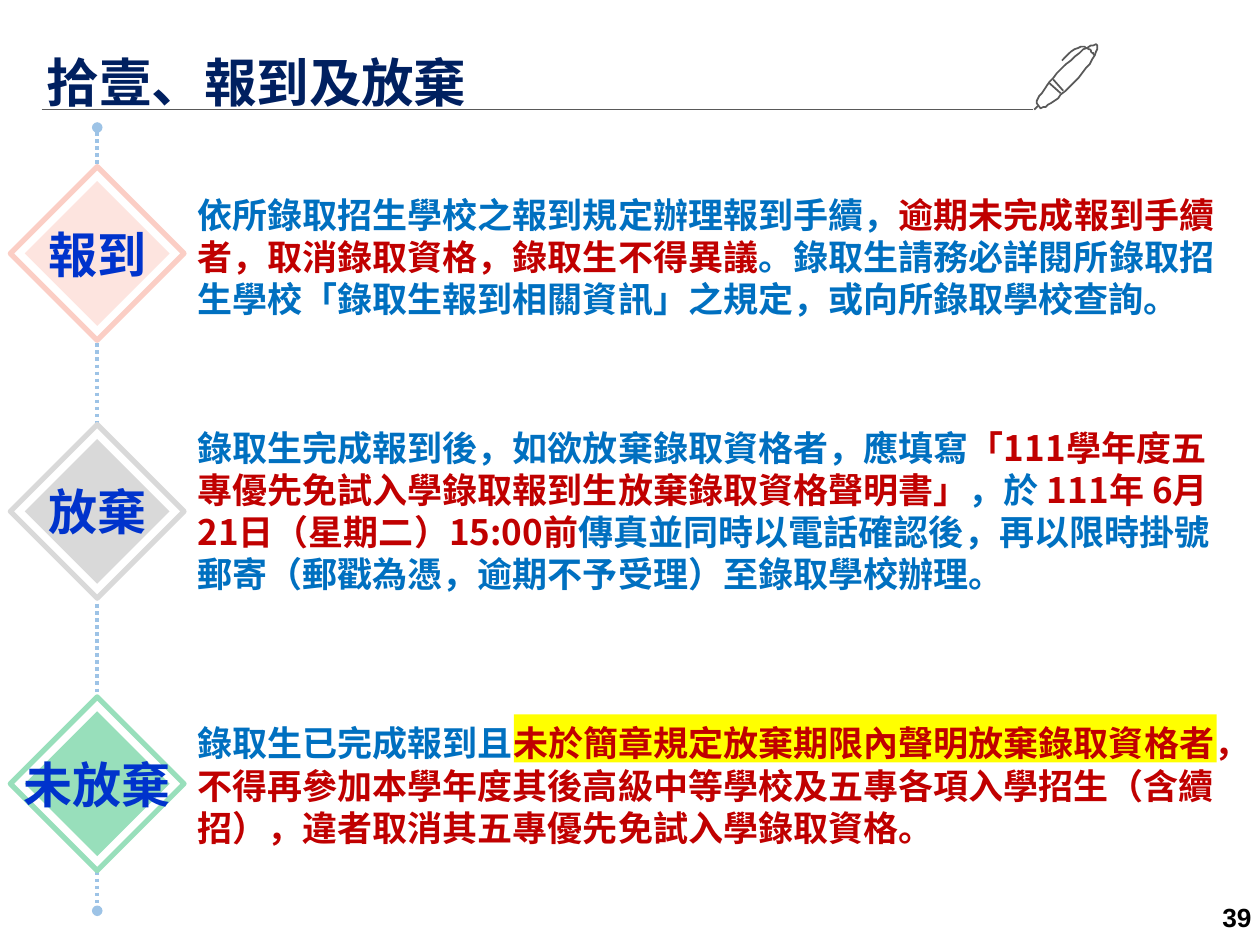
from dataclasses import dataclass

from lxml.etree import SubElement
from pptx import Presentation
from pptx.dml.color import RGBColor
from pptx.enum.dml import MSO_LINE
from pptx.enum.shapes import MSO_CONNECTOR, MSO_SHAPE
from pptx.enum.text import MSO_ANCHOR, PP_ALIGN
from pptx.oxml.ns import qn
from pptx.util import Cm, Pt


@dataclass(frozen=True)
class Theme:
    cjk: str = "Noto Sans CJK SC"
    latin: str = "Arial"
    title: str = "002060"
    label: str = "0033CC"
    body: str = "0070C0"
    alert: str = "C00000"
    number: str = "000000"
    white: str = "FFFFFF"
    mark: str = "FFFF00"
    rule: str = "595959"
    timeline: str = "9DC3E6"
    title_size: int = 30
    label_size: int = 28
    body_size: int = 20
    number_size: int = 15


T = Theme()

# Each stage: label, ring colour, core colour, centre y, text top, text height, runs
STAGES = [
    ("報到", "FBCEC5", "FDE4DF", 5.11, 3.78, 2.82, [
        ("依所錄取招生學校之報到規定辦理報到手續，", T.body),
        ("逾期未完成報到手續者，取消錄取資格，錄取生不得異議", T.alert),
        ("。錄取生請務必詳閱所錄取招生學校「錄取生報到相關資訊」之規定，"
         "或向所錄取學校查詢。", T.body)]),
    ("放棄", "D9D9D9", "D9D9D9", 10.31, 8.48, 3.68, [
        ("錄取生完成報到後，如欲放棄錄取資格者，應填寫", T.body),
        ("「111學年度五\n專優先免試入學錄取報到生放棄錄取資格聲明書」", T.alert),
        ("，於 ", T.body),
        ("111年 6月\n21日（星期二）15:00前", T.alert),
        ("傳真並同時以電話確認後，再以限時掛號郵寄（郵戳為憑，逾期不予受理）"
         "至錄取學校辦理。", T.body)]),
    ("未放棄", "98DFBB", "98DFBB", 15.8, 14.43, 2.82, [
        ("錄取生已完成報到且", T.body),
        ("未於簡章規定放棄期限內聲明放棄錄取資格者，不得再參加本學年度其後"
         "高級中等學校及五專各項入學招生（含續招），違者取消其五專優先免試"
         "入學錄取資格。", T.alert)]),
]


def rgb(code):
    return RGBColor.from_string(code)


def set_font(font, name, size, color=None):
    font.name, font.size, font.bold = name, Pt(size), True
    if color:
        font.color.rgb = rgb(color)
    SubElement(font._element, qn("a:ea")).set("typeface", name)


def add_text(shapes, box, text, name, size, color, align=PP_ALIGN.LEFT,
             anchor=MSO_ANCHOR.TOP, inset=0.25):
    tf = shapes.add_textbox(*map(Cm, box)).text_frame
    tf.word_wrap = True
    tf.vertical_anchor = anchor
    tf.margin_left = tf.margin_right = Cm(inset)
    p = tf.paragraphs[0]
    p.text, p.alignment = text, align
    set_font(p.font, name, size, color)
    return p


def add_filled(shapes, kind, box, fill, line=None):
    sp = shapes.add_shape(kind, *map(Cm, box))
    sp.shadow.inherit = False
    sp.fill.solid()
    sp.fill.fore_color.rgb = rgb(fill)
    if line:
        sp.line.color.rgb, sp.line.width = rgb(line), Pt(3)
    else:
        sp.line.fill.background()


def add_line(shapes, start, end, color, width):
    line = shapes.add_connector(MSO_CONNECTOR.STRAIGHT, *map(Cm, start + end))
    line.line.color.rgb, line.line.width = rgb(color), Pt(width)
    SubElement(line._element.spPr, qn("a:effectLst"))
    return line


def bezier(p0, p1, p2, p3, steps=10):
    """Points along a cubic curve, without its start."""
    return [tuple((1 - t) ** 3 * a + 3 * (1 - t) ** 2 * t * b
                  + 3 * (1 - t) * t ** 2 * c + t ** 3 * d
                  for a, b, c, d in zip(p0, p1, p2, p3))
            for t in (i / steps for i in range(1, steps + 1))]


def add_pen(shapes, left, top, width):
    """Outline of a pen, drawn on a grid 52 units wide."""
    body = [(50, 3), *bezier((50, 3), (47, 0), (34, 9), (21, 22)),
            *bezier((21, 22), (10, 33), (3, 44), (2, 49)), (5, 53),
            *bezier((5, 53), (10, 52), (20, 44), (31, 33)),
            *bezier((31, 33), (44, 20), (52, 6), (50, 3))]
    clip = [(48, 11), *bezier((48, 11), (48, 11), (45, 7), (42, 5)),
            *bezier((42, 5), (42, 5), (36, 0), (22, 15))]
    bands = [[(21, 41), (12, 33)], [(15, 30), (23, 39)]]
    tip = [(3, 51), (0, 54)]
    first, *rest = [body, clip, *bands, tip]
    fb = shapes.build_freeform(*first[0], scale=Cm(width) / 52)
    fb.add_line_segments(first[1:], close=True)
    for stroke in rest:
        fb.move_to(*stroke[0])
        fb.add_line_segments(stroke[1:], close=False)
    sp = fb.convert_to_shape(Cm(left), Cm(top))
    sp.shadow.inherit = False
    sp.fill.background()
    sp.line.color.rgb, sp.line.width = rgb(T.rule), Pt(1)


def add_header(shapes, left, top, width):
    p = add_text(shapes, (left, top, width, 1.22), "拾壹、報到及放棄",
                 T.cjk, T.title_size, T.title)
    p.line_spacing = 0.9
    add_line(shapes, (left + 0.15, top + 1.19), (left + 20.14, top + 1.19),
             T.rule, 0.5)
    add_pen(shapes, left + 20.16, top - 0.18, 1.32)


def add_timeline(shapes, x, top, bottom):
    line = add_line(shapes, (x, top), (x, bottom), T.timeline, 2)
    line.line.dash_style = MSO_LINE.ROUND_DOT
    ln = line.line._get_or_add_ln()
    for end in ("a:headEnd", "a:tailEnd"):
        SubElement(ln, qn(end)).set("type", "oval")


def add_badge(shapes, x, y, label, ring, core):
    """Two nested diamonds and a label, all centred on x, y."""
    group = shapes.add_group_shape().shapes
    for size, fill, line in ((3.5, T.white, ring), (2.92, core, None)):
        box = (x - size / 2, y - size / 2, size, size)
        add_filled(group, MSO_SHAPE.DIAMOND, box, fill, line)
    add_text(group, (x - 1.75, y - 0.72, 3.5, 1.44), label, T.cjk, T.label_size,
             T.label, PP_ALIGN.CENTER, MSO_ANCHOR.MIDDLE, 0)


def add_rules_text(shapes, box, runs):
    tf = shapes.add_textbox(*map(Cm, box)).text_frame
    tf.word_wrap = True
    p = tf.paragraphs[0]
    p._p.get_or_add_pPr().set("marL", str(Cm(0.76)))
    set_font(p.font, T.cjk, T.body_size)
    for text, color in runs:
        for i, part in enumerate(text.split("\n")):
            if i:
                p.add_line_break()
            r = p.add_run()
            r.text = part
            r.font.color.rgb = rgb(color)


def main():
    prs = Presentation()
    prs.slide_width, prs.slide_height = Cm(25.4), Cm(19.05)
    shapes = prs.slides.add_slide(prs.slide_layouts[6]).shapes
    axis = 1.96
    add_filled(shapes, MSO_SHAPE.RECTANGLE, (10.36, 14.4, 14.17, 0.97), T.mark)
    add_header(shapes, 0.69, 1.02, 20.04)
    add_timeline(shapes, axis, 2.57, 18.36)
    for label, ring, core, y, top, height, runs in STAGES:
        add_badge(shapes, axis, y, label, ring, core)
        add_rules_text(shapes, (2.97, top, 22.2, height), runs)
    add_text(shapes, (19.51, 18.11, 5.72, 0.76), "39", T.latin, T.number_size,
             T.number, PP_ALIGN.RIGHT, MSO_ANCHOR.MIDDLE, 0)
    prs.save("out.pptx")


if __name__ == "__main__":
    main()
